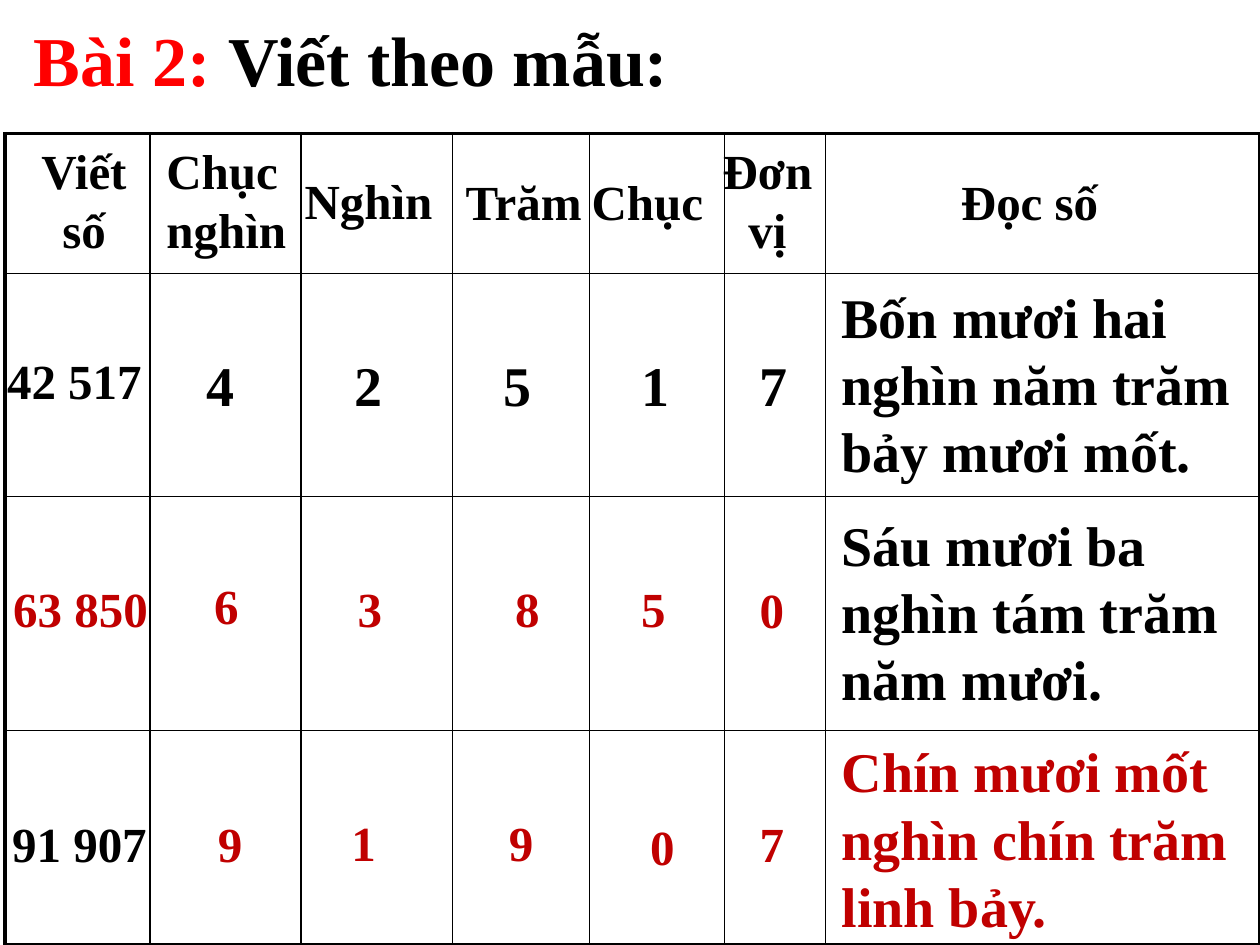
from dataclasses import dataclass

from lxml.etree import SubElement
from pptx import Presentation
from pptx.dml.color import RGBColor
from pptx.enum.text import MSO_ANCHOR, MSO_AUTO_SIZE as AutoSize, PP_ALIGN as Align
from pptx.oxml.ns import qn
from pptx.util import Pt

FONT = "Times New Roman"
BLACK, RED, ANSWER = "000000", "FF0000", "C00000"
THIN, THICK = 1, 2.25
COLUMNS = [82.8, 86.4, 86.4, 78.5, 77, 57.6, 248.4]
ROWS = [80, 127.4, 133.9, 122.4]
READING_LEFT = 473.8


@dataclass
class Label:
    text: str
    left: float
    top: float
    width: float = 60
    size: float = 28
    color: str = BLACK
    align: Align = Align.CENTER
    lines: int = 1


def rgb(color: str) -> RGBColor:
    return RGBColor.from_string(color)


def box_height(size: float, lines: int = 1) -> float:
    return 1.2 * size * lines + 7.2


def place(shape, left: float, top: float, width: float, height: float) -> None:
    shape.left, shape.top = Pt(left), Pt(top)
    shape.width, shape.height = Pt(width), Pt(height)


def add_label(slide, label: Label) -> None:
    box = slide.shapes.add_textbox(
        Pt(label.left), Pt(label.top), Pt(label.width),
        Pt(box_height(label.size, label.lines)))
    frame = box.text_frame
    frame.word_wrap = True
    frame.auto_size = AutoSize.SHAPE_TO_FIT_TEXT
    paragraph = frame.paragraphs[0]
    paragraph.text = label.text
    paragraph.alignment = label.align
    font = paragraph.font
    font.name, font.size, font.bold = FONT, Pt(label.size), True
    font.color.rgb = rgb(label.color)


def set_border(cell, side: str, width: float) -> None:
    line = SubElement(cell._tc.get_or_add_tcPr(), qn(f"a:{side}"), w=str(Pt(width)))
    fill = SubElement(line, qn("a:solidFill"))
    SubElement(fill, qn("a:srgbClr"), val=BLACK)


def add_grid(slide, left: float, top: float) -> None:
    table = slide.shapes.add_table(
        len(ROWS), len(COLUMNS), Pt(left), Pt(top), Pt(sum(COLUMNS)), Pt(sum(ROWS))).table
    table.first_row = table.horz_banding = False
    for column, width in zip(table.columns, COLUMNS):
        column.width = Pt(width)
    last_row, last_column = len(ROWS) - 1, len(COLUMNS) - 1
    for r, height in enumerate(ROWS):
        table.rows[r].height = Pt(height)
        for c in range(len(COLUMNS)):
            cell = table.cell(r, c)
            outer = {"lnL": c == 0, "lnR": c == last_column,
                     "lnT": r == 0, "lnB": r == last_row}
            for side, is_outer in outer.items():
                set_border(cell, side, THICK if is_outer else THIN)
            cell.fill.background()


def add_heading(slide) -> None:
    heading = slide.shapes.title
    place(heading, 12.2, 5.8, 534.2, box_height(40))
    frame = heading.text_frame
    frame.auto_size = AutoSize.NONE
    frame.vertical_anchor = MSO_ANCHOR.TOP
    paragraph = frame.paragraphs[0]
    paragraph.alignment = Align.LEFT
    font = paragraph.font
    font.name, font.size, font.bold = FONT, Pt(40), True
    for text, color in [("Bài 2: ", RED), ("Viết theo mẫu:", BLACK)]:
        run = paragraph.add_run()
        run.text = text
        run.font.color.rgb = rgb(color)


HEADERS = [
    Label("Viết số", 3, 77, 90, lines=2),
    Label("Chục nghìn", 88, 77, 90, align=Align.LEFT, lines=2),
    Label("Nghìn", 167, 93.6, 102, align=Align.LEFT),
    Label("Trăm", 259, 94.3, 84, align=Align.LEFT),
    Label("Chục", 331, 94.3, 84, align=Align.LEFT),
    Label("Đơn vị", 399.6, 77, 77.8, lines=2),
    Label("Đọc số", 513.4, 94.3, 149.8),
]
NUMBERS = [
    Label("42 517", -14.4, 196.6, 113.8),
    Label("63 850", -5, 326.9, 102, color=ANSWER),
    Label("91 907", -8.6, 461.5, 108),
]
SAMPLE_DIGITS = [
    Label(digit, left, 196.6, width, 32)
    for digit, left, width in [("4", 95.8, 60), ("2", 180.7, 60), ("5", 260, 72),
                               ("1", 332.6, 84), ("7", 411.8, 60)]
]
ANSWER_DIGITS = [
    Label(digit, left, top, color=ANSWER)
    for digit, left, top in [
        ("6", 99.4, 325.4), ("3", 181.4, 326.9), ("8", 271.4, 326.9),
        ("5", 343.4, 326.9), ("0", 411.1, 327.6),
        ("9", 101.5, 461.5), ("1", 177.8, 460.8), ("9", 267.8, 460.8),
        ("0", 348.5, 463), ("7", 411.1, 461.5)]
]
READINGS = [
    Label(text, READING_LEFT, top, width, 32, color, Align.LEFT, 3)
    for text, top, width, color in [
        ("Bốn mươi hai nghìn năm trăm bảy mươi mốt.", 157.7, 277.2, BLACK),
        ("Sáu mươi ba nghìn tám trăm năm mươi.", 288, 246.2, BLACK),
        ("Chín mươi mốt nghìn chín trăm linh bảy.", 417.6, 246.2, ANSWER)]
]


def main() -> None:
    deck = Presentation()
    deck.slide_width, deck.slide_height = Pt(720), Pt(540)
    slide = deck.slides.add_slide(deck.slide_layouts[5])

    # Heading and empty ruled table
    add_heading(slide)
    add_grid(slide, 2.9, 76.3)

    # Words and digits laid over the table
    for label in HEADERS + NUMBERS + SAMPLE_DIGITS + ANSWER_DIGITS + READINGS:
        add_label(slide, label)

    deck.save("out.pptx")


if __name__ == "__main__":
    main()
